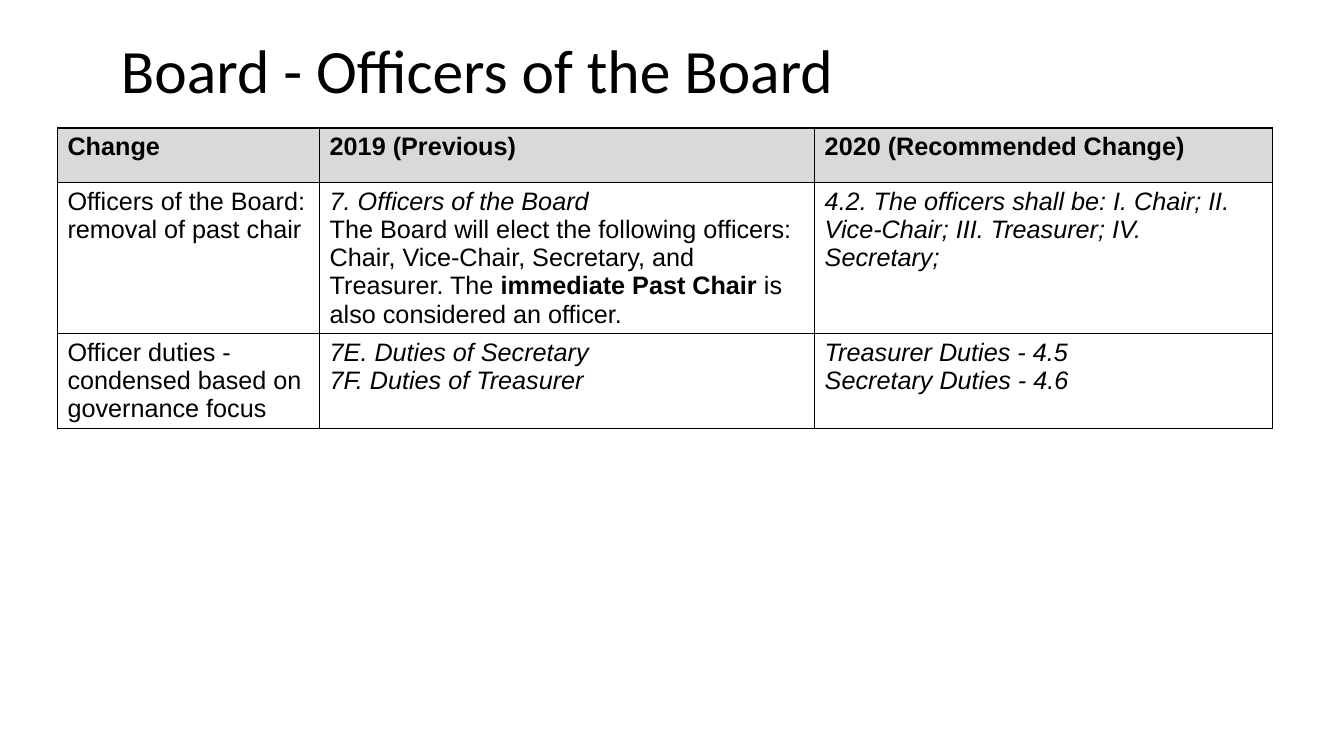
from lxml import etree
from pptx import Presentation
from pptx.dml.color import RGBColor
from pptx.enum.text import MSO_ANCHOR, PP_ALIGN
from pptx.oxml.ns import qn
from pptx.util import Inches, Pt

LEFT = PP_ALIGN.LEFT
TOP, MIDDLE = MSO_ANCHOR.TOP, MSO_ANCHOR.MIDDLE
TITLE_ONLY = 5
COLORS = {"text": "000000", "border": "000000", "header": "D9D9D9", "body": "FFFFFF"}
COLUMN_WIDTHS = [2.6, 4.91, 4.54]
ROW_HEIGHT = 0.54

# Each cell is a list of paragraphs, each paragraph a list of (text, style) runs.
CHANGES = [
    [
        [[("Change", "bold")]],
        [[("2019 (Previous)", "bold")]],
        [[("2020 (Recommended Change)", "bold")]],
    ],
    [
        [[("Officers of the Board: removal of past chair", "plain")]],
        [
            [("7. Officers of the Board", "italic")],
            [
                ("The Board will elect the following officers: Chair, Vice-Chair, "
                 "Secretary, and Treasurer. The ", "plain"),
                ("immediate Past Chair", "bold"),
                (" is also considered an officer.", "plain"),
            ],
        ],
        [[("4.2. The officers shall be: I. Chair; II. Vice-Chair; III. Treasurer; "
           "IV. Secretary;", "italic")]],
    ],
    [
        [[("Officer duties - condensed based on governance focus", "plain")]],
        [[("7E. Duties of Secretary", "italic")], [("7F. Duties of Treasurer", "italic")]],
        [[("Treasurer Duties - 4.5", "italic")], [("Secretary Duties - 4.6", "italic")]],
    ],
]


def add_run(paragraph, text, font_name, size, style="plain"):
    run = paragraph.add_run()
    run.text = text
    font = run.font
    font.name = font_name
    font.size = Pt(size)
    font.bold = style == "bold"
    font.italic = style == "italic"
    font.color.rgb = RGBColor.from_string(COLORS["text"])


def set_borders(cell, width=1):
    properties = cell._tc.get_or_add_tcPr()
    for position, side in enumerate(("a:lnL", "a:lnR", "a:lnT", "a:lnB")):
        line = etree.Element(qn(side), w=str(Pt(width)))
        fill = etree.SubElement(line, qn("a:solidFill"))
        etree.SubElement(fill, qn("a:srgbClr"), val=COLORS["border"])
        properties.insert(position, line)


def fill_cell(cell, paragraphs, color):
    cell.fill.solid()
    cell.fill.fore_color.rgb = RGBColor.from_string(color)
    cell.vertical_anchor = TOP
    cell.margin_left = cell.margin_right = Inches(0.1)
    cell.margin_top = cell.margin_bottom = Inches(0.05)
    set_borders(cell)
    frame = cell.text_frame
    for index, runs in enumerate(paragraphs):
        paragraph = frame.add_paragraph() if index else frame.paragraphs[0]
        paragraph.alignment = LEFT
        for text, style in runs:
            add_run(paragraph, text, "Arial", 18, style)


def place_title(slide, text, left, top, width, height):
    title = slide.shapes.title
    title.left, title.top = Inches(left), Inches(top)
    title.width, title.height = Inches(width), Inches(height)
    frame = title.text_frame
    frame.word_wrap = True
    frame.vertical_anchor = MIDDLE
    paragraph = frame.paragraphs[0]
    paragraph.alignment = LEFT
    paragraph.line_spacing = 0.9
    add_run(paragraph, text, "Calibri", 44)


def add_changes_table(slide, left, top):
    table = slide.shapes.add_table(
        len(CHANGES), len(COLUMN_WIDTHS), Inches(left), Inches(top),
        Inches(sum(COLUMN_WIDTHS)), Inches(ROW_HEIGHT * len(CHANGES)),
    ).table
    for column, width in zip(table.columns, COLUMN_WIDTHS):
        column.width = Inches(width)
    for row_index, row in enumerate(CHANGES):
        table.rows[row_index].height = Inches(ROW_HEIGHT)
        color = COLORS["body" if row_index else "header"]
        for column_index, paragraphs in enumerate(row):
            fill_cell(table.cell(row_index, column_index), paragraphs, color)


def main():
    deck = Presentation()
    deck.slide_width, deck.slide_height = Inches(13.33), Inches(7.5)
    slide = deck.slides.add_slide(deck.slide_layouts[TITLE_ONLY])
    add_changes_table(slide, 0.57, 1.27)
    place_title(slide, "Board - Officers of the Board", 1.1, 0, 11.5, 1.45)
    deck.save("out.pptx")


if __name__ == "__main__":
    main()
